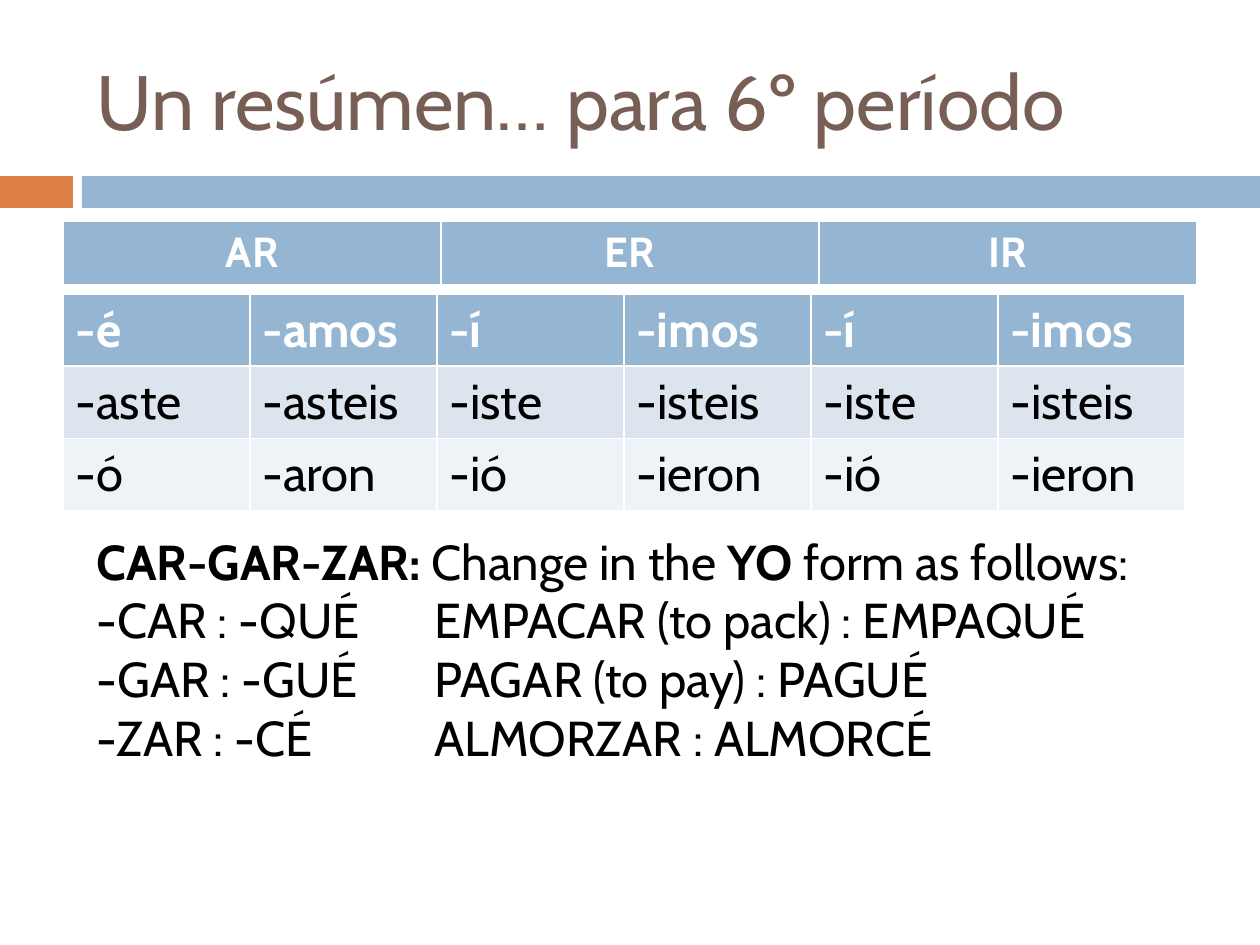
from lxml import etree
from pptx import Presentation
from pptx.dml.color import RGBColor
from pptx.enum.shapes import MSO_SHAPE
from pptx.enum.text import MSO_ANCHOR, PP_ALIGN
from pptx.oxml.ns import qn

RECTANGLE = MSO_SHAPE.RECTANGLE
MIDDLE, TOP = MSO_ANCHOR.MIDDLE, MSO_ANCHOR.TOP
LEFT, CENTER = PP_ALIGN.LEFT, PP_ALIGN.CENTER
PX = 914400 / 126
POINT = 12700
FONT = "Cabin"
COLORS = {"orange": "DD8047", "blue": "94B6D2", "brown": "775F55", "white": "FFFFFF",
          "black": "000000", "band_dark": "DCE5EE", "band_light": "EEF3F7"}

# Content
TITLE = "Un resúmen… para 6º período"
VERB_TYPES = [["AR", "ER", "IR"]]
ENDINGS = [
    ["-é", "-amos", "-í", "-imos", "-í", "-imos"],
    ["-aste", "-asteis", "-iste", "-isteis", "-iste", "-isteis"],
    ["-ó", "-aron", "-ió", "-ieron", "-ió", "-ieron"],
]
# Each paragraph is a list of (text, bold) spans
RULES = [
    [("CAR-GAR-ZAR: ", True), ("Change in the ", False), ("YO", True),
     (" form as follows:", False)],
    [("-CAR : -QUÉ\tEMPACAR (to pack) : EMPAQUÉ", False)],
    [("-GAR : -GUÉ\tPAGAR (to pay) : PAGUÉ", False)],
    [("-ZAR : -CÉ\tALMORZAR : ALMORCÉ", False)],
]
BARS = [(0, 73, "orange"), (82, 1178, "blue")]  # left, width, colour
BAR_TOP, BAR_HEIGHT = 176, 32
EXAMPLE_TAB = 338


def px(value):
    return round(value * PX)


def color(name):
    return RGBColor.from_string(COLORS[name])


def add_text(para, text, size=28, fill="black", bold=False, align=LEFT):
    para.alignment = align
    span = para.add_run()
    span.text = text
    span.font.name = FONT
    span.font.size = size * POINT
    span.font.bold = bold
    span.font.color.rgb = color(fill)


def add_grid(page, rows, left, top, column_width, row_height, fills, **header_format):
    columns = len(rows[0])
    table = page.shapes.add_table(len(rows), columns, px(left), px(top),
                                  px(column_width * columns),
                                  px(row_height * len(rows))).table
    for column in table.columns:
        column.width = px(column_width)
    for r, row in enumerate(rows):
        for c, text in enumerate(row):
            cell = table.cell(r, c)
            cell.fill.solid()
            cell.fill.fore_color.rgb = color(fills[r])
            text_format = {"fill": "white", "bold": True, **header_format} if r == 0 else {}
            add_text(cell.text_frame.paragraphs[0], text, **text_format)


def add_tab_stop(para, position):
    tabs = etree.SubElement(para._p.get_or_add_pPr(), qn("a:tabLst"))
    etree.SubElement(tabs, qn("a:tab"), pos=str(px(position)), algn="l")


deck = Presentation()
deck.slide_width, deck.slide_height = px(1260), px(945)
page = deck.slides.add_slide(deck.slide_layouts[5])

# Title
title = page.shapes.title
title.left, title.top, title.width, title.height = px(84), px(32), px(1124), px(136)
title.text_frame.vertical_anchor = MIDDLE
add_text(title.text_frame.paragraphs[0], TITLE, size=44, fill="brown")

# Bars under the title
for left, width, fill in BARS:
    bar = page.shapes.add_shape(RECTANGLE, px(left), px(BAR_TOP), px(width), px(BAR_HEIGHT))
    bar.shadow.inherit = False
    bar.fill.solid()
    bar.fill.fore_color.rgb = color(fill)
    bar.line.fill.background()

# Verb endings and their headings
add_grid(page, ENDINGS, 63, 294, 187, 71, ["blue", "band_dark", "band_light"])
add_grid(page, VERB_TYPES, 63, 221, 378, 63, ["blue"], size=24, align=CENTER)

# Spelling changes
box = page.shapes.add_textbox(px(84), px(525), px(1092), px(251))
frame = box.text_frame
frame.word_wrap = True
frame.vertical_anchor = TOP
for index, spans in enumerate(RULES):
    para = frame.paragraphs[0] if index == 0 else frame.add_paragraph()
    for text, bold in spans:
        add_text(para, text, bold=bold)
    if index:
        add_tab_stop(para, EXAMPLE_TAB)

deck.save("out.pptx")
